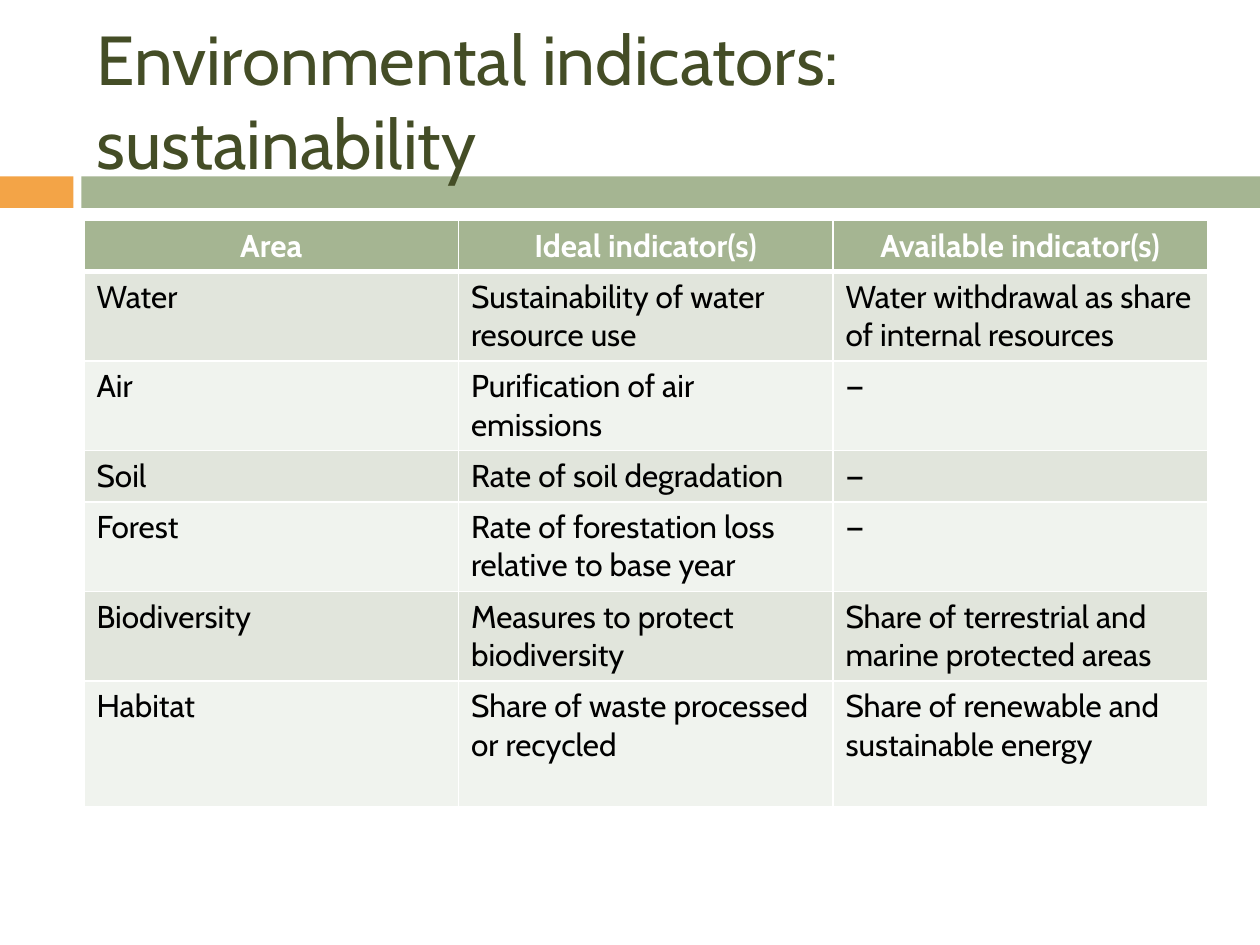
from dataclasses import dataclass

from lxml.etree import SubElement
from pptx import Presentation
from pptx.dml.color import RGBColor
from pptx.enum.shapes import MSO_SHAPE as Shape
from pptx.enum.text import MSO_ANCHOR as Anchor, PP_ALIGN as Align
from pptx.oxml.ns import qn
from pptx.util import Pt

FONT = "Cabin"
GREEN, ORANGE, OLIVE = "A5B592", "F3A447", "444D26"
WHITE, BLACK = "FFFFFF", "000000"
BANDS = ("E1E5DC", "F0F3EE")
LEFT, WIDTH = 48, 642


@dataclass
class Bar:
    left: float
    width: float
    color: str


@dataclass
class Row:
    height: float
    texts: tuple[str, str, str]


BARS = [Bar(0, 42, ORANGE), Bar(46.5, 673.5, GREEN)]
ONE_LINE, TWO_LINES = 29.2, 51.1
ROWS = [
    Row(ONE_LINE, ("Area", "Ideal indicator(s)", "Available indicator(s)")),
    Row(TWO_LINES, ("Water", "Sustainability of water resource use",
                    "Water withdrawal as share of internal resources")),
    Row(TWO_LINES, ("Air", "Purification of air emissions", "—")),
    Row(ONE_LINE, ("Soil", "Rate of soil degradation", "—")),
    Row(TWO_LINES, ("Forest", "Rate of forestation loss relative to base year", "—")),
    Row(TWO_LINES, ("Biodiversity", "Measures to protect biodiversity",
                    "Share of terrestrial and marine protected areas")),
    Row(72, ("Habitat", "Share of waste processed or recycled",
             "Share of renewable and sustainable energy")),
]


def paint(fill, color: str) -> None:
    fill.solid()
    fill.fore_color.rgb = RGBColor.from_string(color)


def write(frame, text: str, *, size: float, color: str,
          bold: bool = False, align=Align.LEFT) -> None:
    para = frame.paragraphs[0]
    para.alignment = align
    span = para.add_run()
    span.text = text
    span.font.name = FONT
    span.font.size = Pt(size)
    span.font.bold = bold
    span.font.color.rgb = RGBColor.from_string(color)


def draw_bar(page, bar: Bar) -> None:
    box = page.shapes.add_shape(Shape.RECTANGLE, Pt(bar.left), Pt(100.8),
                                Pt(bar.width), Pt(18))
    box.shadow.inherit = False
    paint(box.fill, bar.color)
    box.line.fill.background()


def set_borders(cell, top: float, bottom: float) -> None:
    properties = cell._tc.get_or_add_tcPr()
    for side, width in (("L", 1), ("R", 1), ("T", top), ("B", bottom)):
        line = SubElement(properties, qn(f"a:ln{side}"), w=str(Pt(width)))
        SubElement(SubElement(line, qn("a:solidFill")), qn("a:srgbClr"), val=WHITE)


def draw_table(page, rows: list[Row]) -> None:
    columns = len(rows[0].texts)
    table = page.shapes.add_table(
        len(rows), columns, Pt(LEFT), Pt(126), Pt(WIDTH),
        Pt(sum(row.height for row in rows))).table
    for column in table.columns:
        column.width = Pt(WIDTH / columns)
    for index, row in enumerate(rows):
        header = index == 0
        table.rows[index].height = Pt(row.height)
        for cell, text in zip(table.rows[index].cells, row.texts):
            set_borders(cell, top=3 if index == 1 else 1, bottom=3 if header else 1)
            paint(cell.fill, GREEN if header else BANDS[(index - 1) % 2])
            write(cell.text_frame, text, size=18, bold=header,
                  color=WHITE if header else BLACK,
                  align=Align.CENTER if header else Align.LEFT)


def main() -> None:
    deck = Presentation()
    deck.slide_width, deck.slide_height = Pt(720), Pt(540)
    page = deck.slides.add_slide(deck.slide_layouts[5])

    # Band under the title
    for bar in BARS:
        draw_bar(page, bar)

    # Title, brought in front of the band
    title = page.shapes.title
    title.left, title.top, title.width, title.height = map(Pt, (LEFT, 18, WIDTH, 78))
    title.text_frame.vertical_anchor = Anchor.MIDDLE
    title.text_frame.word_wrap = True
    write(title.text_frame, "Environmental indicators: sustainability",
          size=39.6, color=OLIVE)
    page.shapes._spTree.append(title._element)

    # Indicator table
    draw_table(page, ROWS)

    deck.save("out.pptx")


if __name__ == "__main__":
    main()
